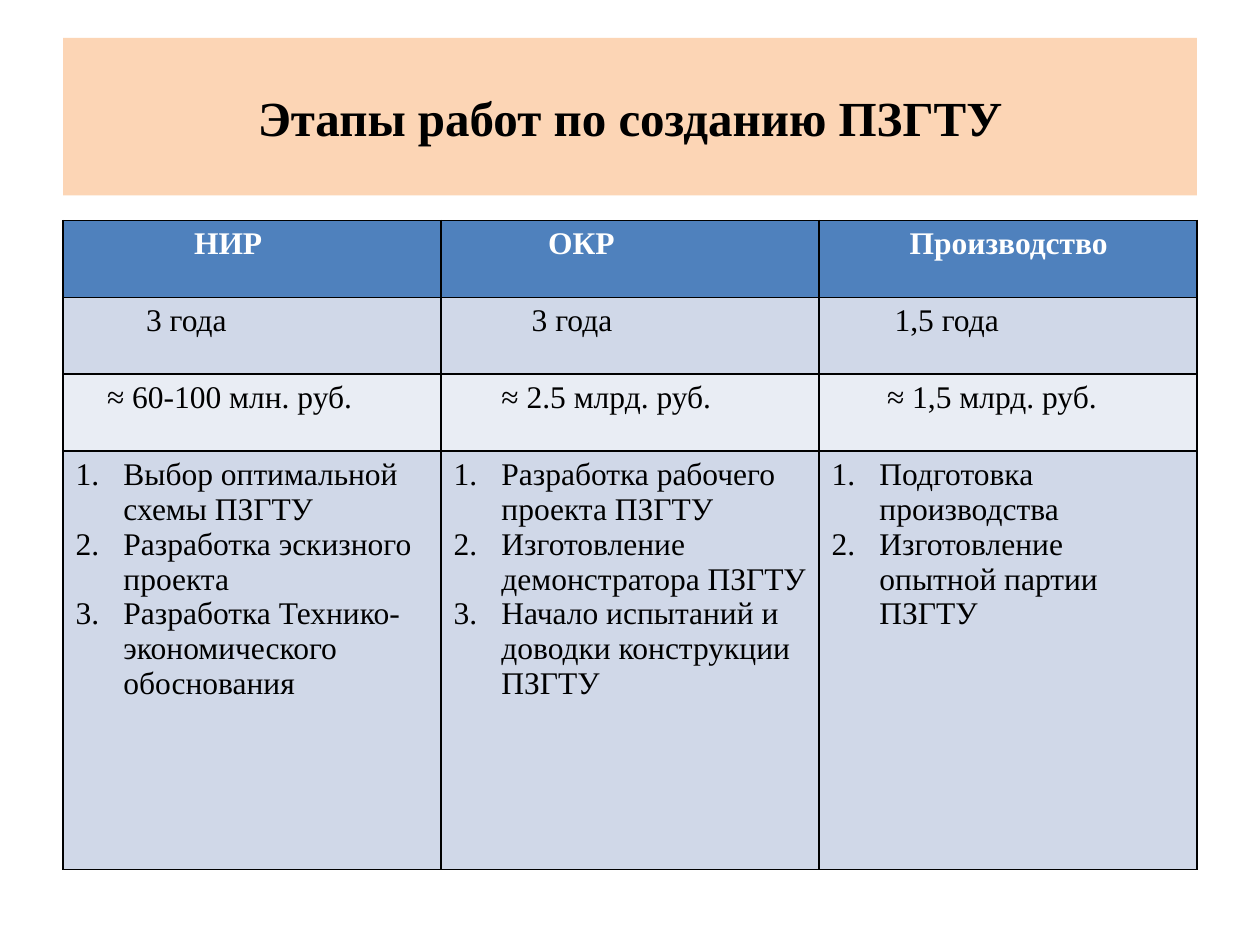
from lxml.etree import SubElement
from pptx import Presentation
from pptx.dml.color import RGBColor
from pptx.enum.text import MSO_ANCHOR, PP_ALIGN
from pptx.oxml.ns import qn
from pptx.util import Inches, Pt

# Content: short cells are (text, left indent), the last row holds lists
TITLE = "Этапы работ по созданию ПЗГТУ"
ROWS = [
    [("НИР", 0.94), ("ОКР", 0.75), ("Производство", 0.62)],
    [("3 года", 0.56), ("3 года", 0.62), ("1,5 года", 0.5)],
    [("≈ 60-100 млн. руб.", 0.25), ("≈ 2.5 млрд. руб.", 0.38),
     ("≈ 1,5 млрд. руб.", 0.44)],
]
TASKS = [
    ["Выбор оптимальной схемы ПЗГТУ", "Разработка эскизного проекта",
     "Разработка Технико- экономического обоснования"],
    ["Разработка рабочего проекта ПЗГТУ", "Изготовление демонстратора ПЗГТУ",
     "Начало испытаний и доводки конструкции ПЗГТУ"],
    ["Подготовка производства", "Изготовление опытной партии ПЗГТУ"],
]
FILLS = ["4F81BD", "D0D8E8", "E9EDF4", "D0D8E8"]
HEIGHTS = [0.61, 0.61, 0.61, 3.32]
LEFT, WIDTH, HANG = 0.5, 9, 0.38
FONT = "Times New Roman"


def paint(fill, hue):
    fill.solid()
    fill.fore_color.rgb = RGBColor.from_string(hue)


def write(par, text, size, hue, bold):
    run = par.add_run()
    run.text = text
    font = run.font
    font.name, font.size, font.bold = FONT, Pt(size), bold
    font.color.rgb = RGBColor.from_string(hue)


def indent(par, left, first=0):
    props = par._p.get_or_add_pPr()
    props.set("marL", str(Inches(left)))
    props.set("indent", str(Inches(first)))
    return props


def border(cell):
    props = cell._tc.get_or_add_tcPr()
    for side in ("a:lnL", "a:lnR", "a:lnT", "a:lnB"):
        line = SubElement(props, qn(side), w=str(Pt(1)))
        fill = SubElement(line, qn("a:solidFill"))
        SubElement(fill, qn("a:srgbClr"), val="000000")


deck = Presentation()
deck.slide_width, deck.slide_height = Inches(10), Inches(7.5)
slide = deck.slides.add_slide(deck.slide_layouts[5])

# Title
title = slide.shapes.title
title.left, title.top = Inches(LEFT), Inches(0.3)
title.width, title.height = Inches(WIDTH), Inches(1.25)
paint(title.fill, "FCD5B5")
title.text_frame.vertical_anchor = MSO_ANCHOR.MIDDLE
head = title.text_frame.paragraphs[0]
head.alignment = PP_ALIGN.CENTER
write(head, TITLE, 28, "000000", True)

# Table
table = slide.shapes.add_table(
    len(HEIGHTS), len(TASKS), Inches(LEFT), Inches(1.75),
    Inches(WIDTH), Inches(sum(HEIGHTS))).table
for col in table.columns:
    col.width = Inches(WIDTH / len(TASKS))
for r, (high, hue) in enumerate(zip(HEIGHTS, FILLS)):
    table.rows[r].height = Inches(high)
    for cell in table.rows[r].cells:
        border(cell)
        paint(cell.fill, hue)

# Short cells
for r, row in enumerate(ROWS):
    for c, (text, left) in enumerate(row):
        par = table.cell(r, c).text_frame.paragraphs[0]
        indent(par, left)
        write(par, text, 18, "000000" if r else "FFFFFF", r == 0)

# Numbered lists
for c, tasks in enumerate(TASKS):
    frame = table.cell(len(ROWS), c).text_frame
    for i, task in enumerate(tasks):
        par = frame.add_paragraph() if i else frame.paragraphs[0]
        props = indent(par, HANG, -HANG)
        SubElement(props, qn("a:buFont"), typeface="+mj-lt")
        SubElement(props, qn("a:buAutoNum"), type="arabicPeriod")
        write(par, task, 18, "000000", False)

deck.save("out.pptx")
